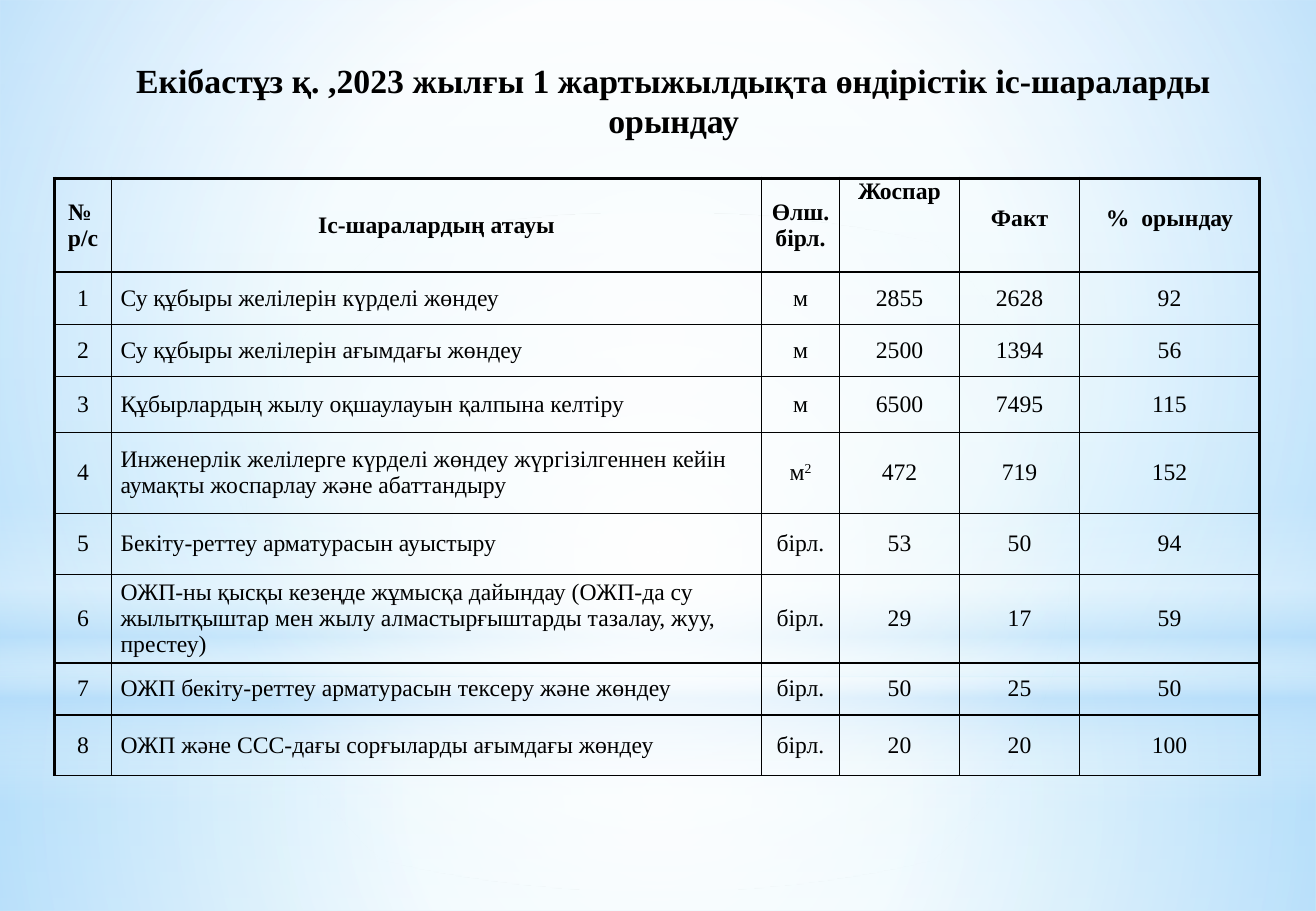
from dataclasses import dataclass

from lxml.etree import SubElement, fromstring
from pptx import Presentation
from pptx.dml.color import RGBColor
from pptx.enum.shapes import MSO_SHAPE
from pptx.enum.text import MSO_ANCHOR, PP_ALIGN
from pptx.oxml.ns import qn
from pptx.util import Cm, Pt

DRAWING = "http://schemas.openxmlformats.org/drawingml/2006/main"


@dataclass(frozen=True)
class Theme:
    """Colours, font and sizes of the slide."""
    font: str = "Times New Roman"
    ink: str = "000000"
    white: str = "FFFFFF"
    glow: str = "B4DCFA"
    sky: tuple = ("F7FCFE", "B7E8FA", "CFF0FB")
    title_size: float = 20
    table_size: float = 14
    frame_width: float = 2.25
    grid_width: float = 1


THEME = Theme()
LINEAR = '<a:lin ang="5400000" scaled="0"/>'
RADIAL = ('<a:path path="circle">'
          '<a:fillToRect l="50000" t="50000" r="50000" b="50000"/></a:path>')

TITLE = "Екібастұз қ. ,2023 жылғы 1 жартыжылдықта өндірістік іс-шараларды орындау"
HEADERS = ("№ \nр/с", "Іс-шаралардың атауы", "Өлш.бірл.", "Жоспар", "Факт", "%  орындау")
ACTIVITIES = (
    ("Су құбыры желілерін күрделі жөндеу", "м", 2855, 2628, 92),
    ("Су құбыры желілерін ағымдағы жөндеу", "м", 2500, 1394, 56),
    ("Құбырлардың жылу оқшаулауын қалпына келтіру", "м", 6500, 7495, 115),
    ("Инженерлік желілерге күрделі жөндеу жүргізілгеннен кейін аумақты жоспарлау"
     " және абаттандыру", "м2", 472, 719, 152),
    ("Бекіту-реттеу арматурасын ауыстыру", "бірл.", 53, 50, 94),
    ("ОЖП-ны қысқы кезеңде жұмысқа дайындау (ОЖП-да су жылытқыштар мен жылу"
     " алмастырғыштарды тазалау, жуу, престеу)", "бірл.", 29, 17, 59),
    ("ОЖП бекіту-реттеу арматурасын тексеру және жөндеу", "бірл.", 50, 25, 50),
    ("ОЖП және ССС-дағы сорғыларды ағымдағы жөндеу", "бірл.", 20, 20, 100),
)
COLUMN_WIDTHS = (1.19, 13.59, 1.63, 2.51, 2.51, 3.76)
ROW_HEIGHTS = (1.96, 1.09, 1.09, 1.17, 1.7, 1.27, 1.85, 1.09, 1.27)


def set_gradient(owner, stops, direction):
    """Replace the solid fill inside owner with a gradient of (place, colour, opacity)."""
    stop_list = "".join(
        f'<a:gs pos="{place * 1000}"><a:srgbClr val="{colour}">'
        f'<a:alpha val="{opacity * 1000}"/></a:srgbClr></a:gs>'
        for place, colour, opacity in stops)
    gradient = fromstring(f'<a:gradFill xmlns:a="{DRAWING}" rotWithShape="1">'
                          f'<a:gsLst>{stop_list}</a:gsLst>{direction}</a:gradFill>')
    solid = owner.find(f".//{qn('a:solidFill')}")
    solid.getparent().replace(solid, gradient)


def add_glow(page, kind, box, stops, direction):
    """Add one translucent shape of the backdrop."""
    shape = page.shapes.add_shape(kind, *map(Cm, box))
    shape.shadow.inherit = False
    shape.line.fill.background()
    shape.fill.solid()
    set_gradient(shape.element, stops, direction)


def add_backdrop(page, box):
    """Paint the sky, its horizon and its lights over the box."""
    left, top, width, height = box
    white, glow = THEME.white, THEME.glow
    page.background.fill.solid()
    start, middle, end = THEME.sky
    set_gradient(page.element, ((0, start, 100), (74, middle, 100),
                                (83, middle, 100), (100, end, 100)), LINEAR)
    horizon = 14.17
    add_glow(page, MSO_SHAPE.RECTANGLE, (left, top + horizon, width, height - horizon),
             ((0, white, 91), (37, white, 76), (100, glow, 79)), RADIAL)
    add_glow(page, MSO_SHAPE.RECTANGLE, (left, top, width, horizon),
             ((0, white, 89), (48, white, 62), (100, glow, 79)), RADIAL)
    add_glow(page, MSO_SHAPE.RECTANGLE, (left, top + 10.46, width, 6.35),
             ((0, white, 0), (29, white, 30), (45, glow, 40),
              (55, white, 26), (65, glow, 60), (100, white, 0)), LINEAR)
    add_glow(page, MSO_SHAPE.OVAL, (left, top + 4.45, width, horizon),
             ((0, white, 100), (56, white, 0)), RADIAL)


def format_text(frame, size, bold, alignment):
    """Give every paragraph of the frame its alignment and font."""
    for para in frame.paragraphs:
        para.alignment = alignment
        for span in para.runs:
            span.font.name = THEME.font
            span.font.size = Pt(size)
            span.font.bold = bold
            span.font.color.rgb = RGBColor.from_string(THEME.ink)


def add_title(page, box):
    """Write the centred title in the box."""
    frame = page.shapes.add_textbox(*map(Cm, box)).text_frame
    frame.word_wrap = True
    frame.text = TITLE
    format_text(frame, THEME.title_size, True, PP_ALIGN.CENTER)


def set_borders(cell, framed_sides):
    """Draw the four cell borders, heavier on the framed sides."""
    properties = cell._tc.get_or_add_tcPr()
    for order, side in enumerate("LRTB"):
        width = THEME.frame_width if side in framed_sides else THEME.grid_width
        line = SubElement(properties, qn(f"a:ln{side}"), w=str(Pt(width)))
        fill = SubElement(line, qn("a:solidFill"))
        SubElement(fill, qn("a:srgbClr"), val=THEME.ink)
        properties.insert(order, line)


def fill_cell(cell, text, row, column):
    """Write and format one table cell according to its place."""
    is_header = row == 0
    frame = cell.text_frame
    if text == "м2":
        frame.text = "м"
        exponent = frame.paragraphs[0].add_run()
        exponent.text = "2"
        exponent.font._element.set("baseline", "30000")
    else:
        frame.text = text
    is_name = column == 1 and not is_header
    format_text(frame, THEME.table_size, is_header,
                PP_ALIGN.LEFT if is_name else PP_ALIGN.CENTER)
    cell.margin_left = cell.margin_right = Cm(0.19)
    cell.margin_top = Cm(0.57 if is_header and column > 3 else 0)
    cell.margin_bottom = Cm(0)
    top_aligned = is_header and column > 2
    cell.vertical_anchor = MSO_ANCHOR.TOP if top_aligned else MSO_ANCHOR.MIDDLE
    cell.fill.background()
    frame_sides = {"L": column == 0, "R": column == len(HEADERS) - 1, "T": is_header}
    set_borders(cell, [side for side, framed in frame_sides.items() if framed])


def add_activity_table(page, box):
    """Place the table of planned and completed activities in the box."""
    rows = [HEADERS] + [(number, *activity)
                        for number, activity in enumerate(ACTIVITIES, 1)]
    table = page.shapes.add_table(len(rows), len(HEADERS), *map(Cm, box)).table
    table.first_row = table.horz_banding = False
    for column, width in zip(table.columns, COLUMN_WIDTHS):
        column.width = Cm(width)
    for row, height in zip(table.rows, ROW_HEIGHTS):
        row.height = Cm(height)
    for row, values in enumerate(rows):
        for column, value in enumerate(values):
            fill_cell(table.cell(row, column), str(value), row, column)


def main():
    """Build the deck and save it."""
    deck = Presentation()
    deck.slide_width, deck.slide_height = Cm(27.51), Cm(19.05)
    page = deck.slides.add_slide(deck.slide_layouts[6])
    add_backdrop(page, (0, 0, 27.51, 19.05))
    add_activity_table(page, (1.14, 3.73, sum(COLUMN_WIDTHS), sum(ROW_HEIGHTS)))
    add_title(page, (1.45, 1.12, 25.27, 2.21))
    deck.save("out.pptx")


if __name__ == "__main__":
    main()
